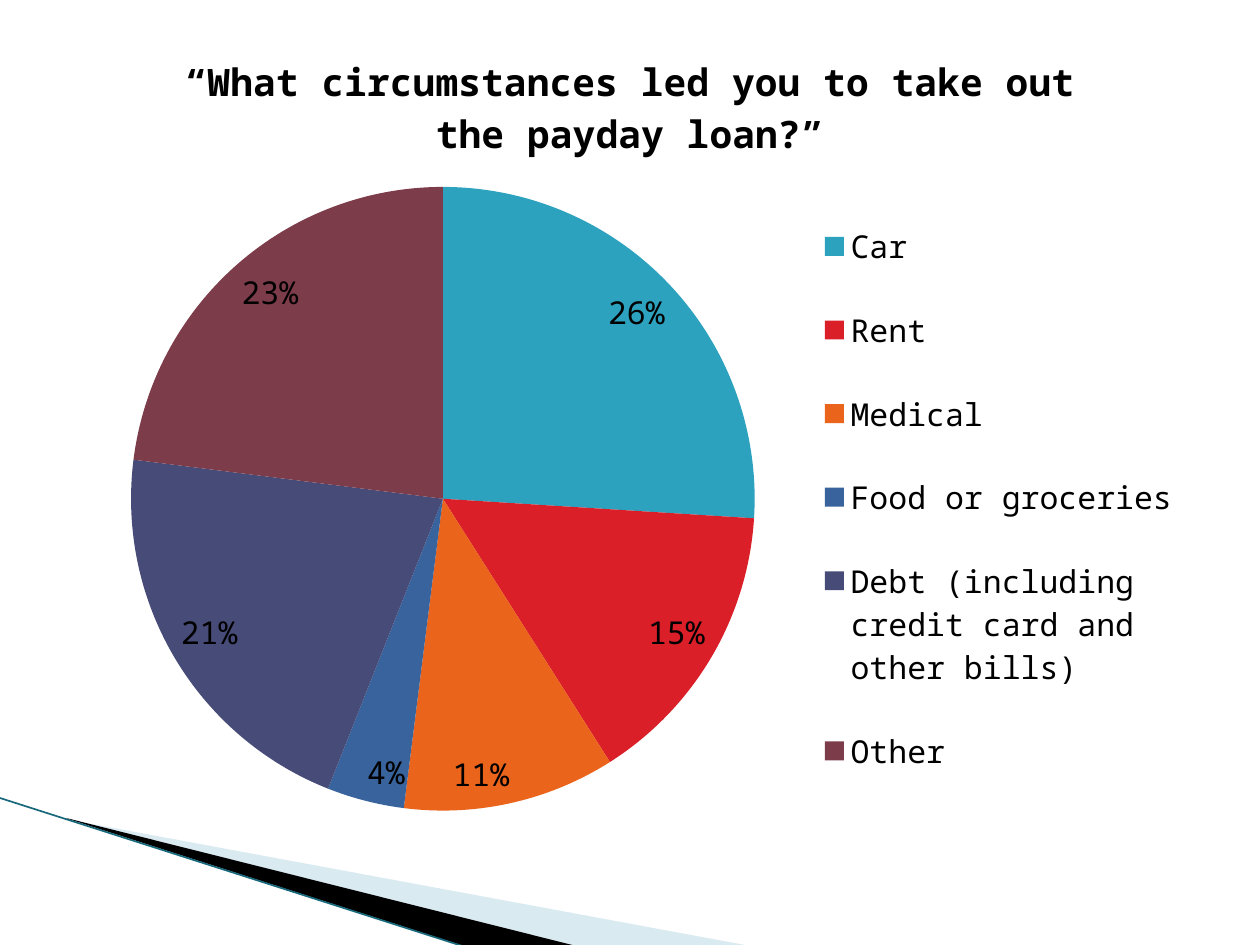
from lxml.etree import SubElement
from pptx import Presentation
from pptx.chart.data import CategoryChartData
from pptx.dml.color import RGBColor
from pptx.enum.chart import XL_CHART_TYPE as ChartType
from pptx.enum.chart import XL_LABEL_POSITION as LabelPosition
from pptx.enum.chart import XL_LEGEND_POSITION as LegendPosition
from pptx.enum.shapes import MSO_CONNECTOR as Connector
from pptx.oxml import parse_xml
from pptx.oxml.ns import nsdecls, qn
from pptx.util import Pt

COLORS = {
    "text": "000000",
    "pale": "A0CBDC",
    "black": "000000",
    "edge": "17687A",
    "Car": "2DA2BF",
    "Rent": "DA1F28",
    "Medical": "EB641B",
    "Food or groceries": "39639D",
    "Debt (including credit card and other bills)": "474B78",
    "Other": "7D3C4A",
}
REASONS = {
    "Car": 26,
    "Rent": 15,
    "Medical": 11,
    "Food or groceries": 4,
    "Debt (including credit card and other bills)": 21,
    "Other": 23,
}


def rgb(name):
    return RGBColor.from_string(COLORS[name])


class SlideBuilder:
    font_name = "Noto Sans Mono"
    text_size = 18
    title_size = 21.6

    def __init__(self, slide):
        self.slide = slide

    def style_font(self, font, size, bold=False):
        font.name = self.font_name
        font.size = Pt(size)
        font.bold = bold
        font.color.rgb = rgb("text")

    def wedge(self, points, color, opacity=100):
        start, *rest = [(Pt(x), Pt(y)) for x, y in points]
        builder = self.slide.shapes.build_freeform(*start)
        builder.add_line_segments(rest, close=True)
        shape = builder.convert_to_shape()
        shape.shadow.inherit = False
        shape.fill.solid()
        shape.fill.fore_color.rgb = rgb(color)
        shape.line.fill.background()
        if opacity < 100:
            fill_color = shape.fill._xPr.find(".//" + qn("a:srgbClr"))
            SubElement(fill_color, qn("a:alpha"), val=str(opacity * 1000))

    def line(self, start, end, color, width):
        ends = [Pt(value) for value in (*start, *end)]
        connector = self.slide.shapes.add_connector(Connector.STRAIGHT, *ends)
        connector.line.color.rgb = rgb(color)
        connector.line.width = Pt(width)
        SubElement(connector._element.spPr, qn("a:effectLst"))

    def chart_layout(self, x, y, w, h, inner=False):
        target = '<c:layoutTarget val="inner"/>' if inner else ""
        sizes = "".join(
            f'<c:{key} val="{value}"/>'
            for key, value in zip("xywh", (x, y, w, h))
        )
        return parse_xml(
            f'<c:layout {nsdecls("c")}><c:manualLayout>{target}'
            f'<c:xMode val="edge"/><c:yMode val="edge"/>{sizes}'
            "</c:manualLayout></c:layout>"
        )

    def pie(self, left, top, width, height, title, values):
        data = CategoryChartData()
        data.categories = list(values)
        data.add_series("Series 1", list(values.values()))
        frame = self.slide.shapes.add_chart(
            ChartType.PIE, Pt(left), Pt(top), Pt(width), Pt(height), data
        )
        chart = frame.chart
        self.style_font(chart.font, self.text_size)

        chart.has_title = True
        para = chart.chart_title.text_frame.paragraphs[0]
        para.text = title
        self.style_font(para.font, self.title_size, bold=True)
        chart.chart_title.include_in_layout = False

        plot = chart.plots[0]
        plot.vary_by_categories = True
        for index, name in enumerate(values):
            point = plot.series[0].points[index]
            point.format.fill.solid()
            point.format.fill.fore_color.rgb = rgb(name)
            point.format.line.fill.background()
        plot.has_data_labels = True
        labels = plot.data_labels
        labels.show_percentage = True
        labels.show_value = False
        labels.number_format = "0%"
        labels.number_format_is_linked = False
        labels.position = LabelPosition.INSIDE_END
        self.style_font(labels.font, self.text_size)

        chart.has_legend = True
        legend = chart.legend
        legend.position = LegendPosition.RIGHT
        legend.include_in_layout = False
        self.style_font(legend.font, self.text_size)

        plot_area = chart._chartSpace.find(".//" + qn("c:plotArea"))
        legend_area = legend._element
        for area in (plot_area, legend_area):
            for layout in area.findall(qn("c:layout")):
                area.remove(layout)
        plot_area.insert(0, self.chart_layout(0.06, 0.19, 0.55, 0.73, True))
        legend_area.find(qn("c:legendPos")).addnext(
            self.chart_layout(0.66, 0.19, 0.33, 0.73)
        )


def main():
    deck = Presentation()
    deck.slide_width, deck.slide_height = Pt(720), Pt(540)
    page = SlideBuilder(deck.slides.add_slide(deck.slide_layouts[6]))
    page.wedge([(39.6, 468.5), (428.4, 540.5), (328.5, 540.5), (39.6, 468)],
               "pale", opacity=40)
    page.wedge([(38, 467.5), (329, 540.5), (268, 541.5), (39, 468)], "black")
    page.line((-0.7, 455.8), (267, 541.5), "edge", 0.95)
    page.pie(36, 12, 648, 492,
             "“What circumstances led you to take out the payday loan?”",
             REASONS)
    deck.save("out.pptx")


if __name__ == "__main__":
    main()
